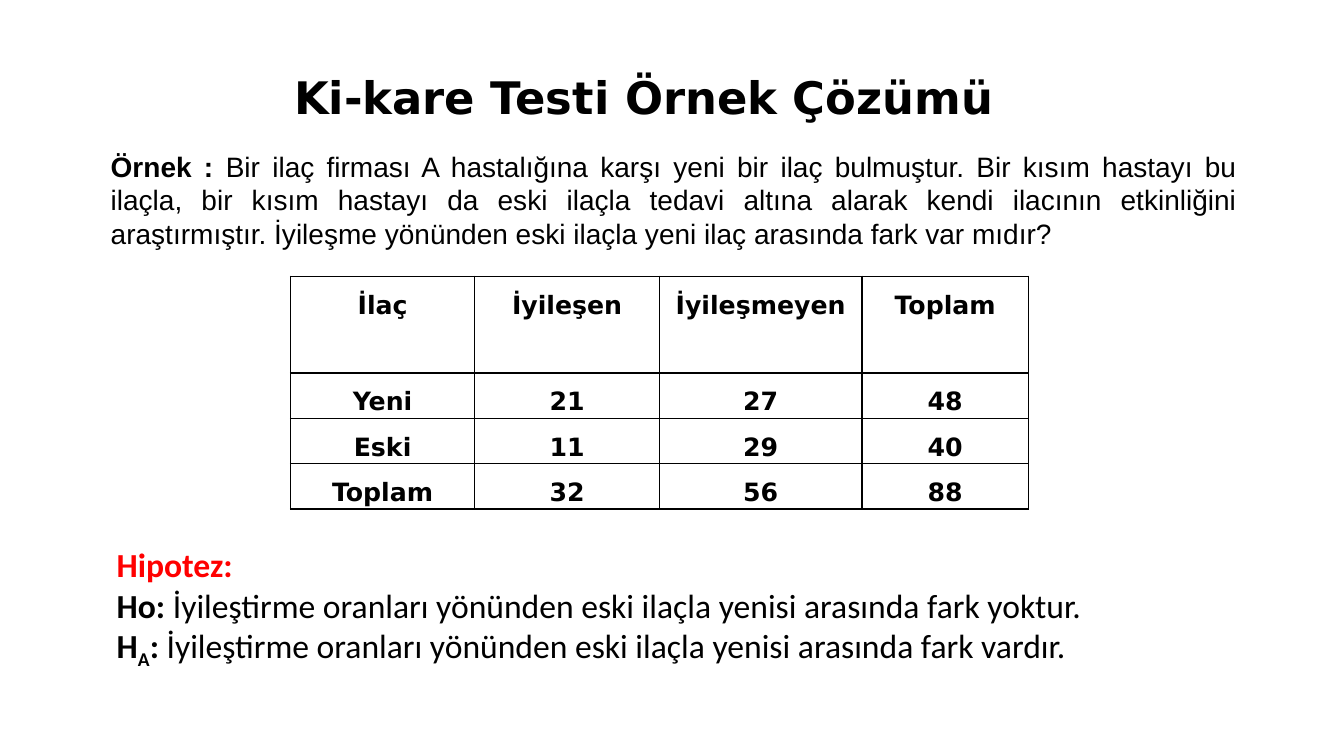
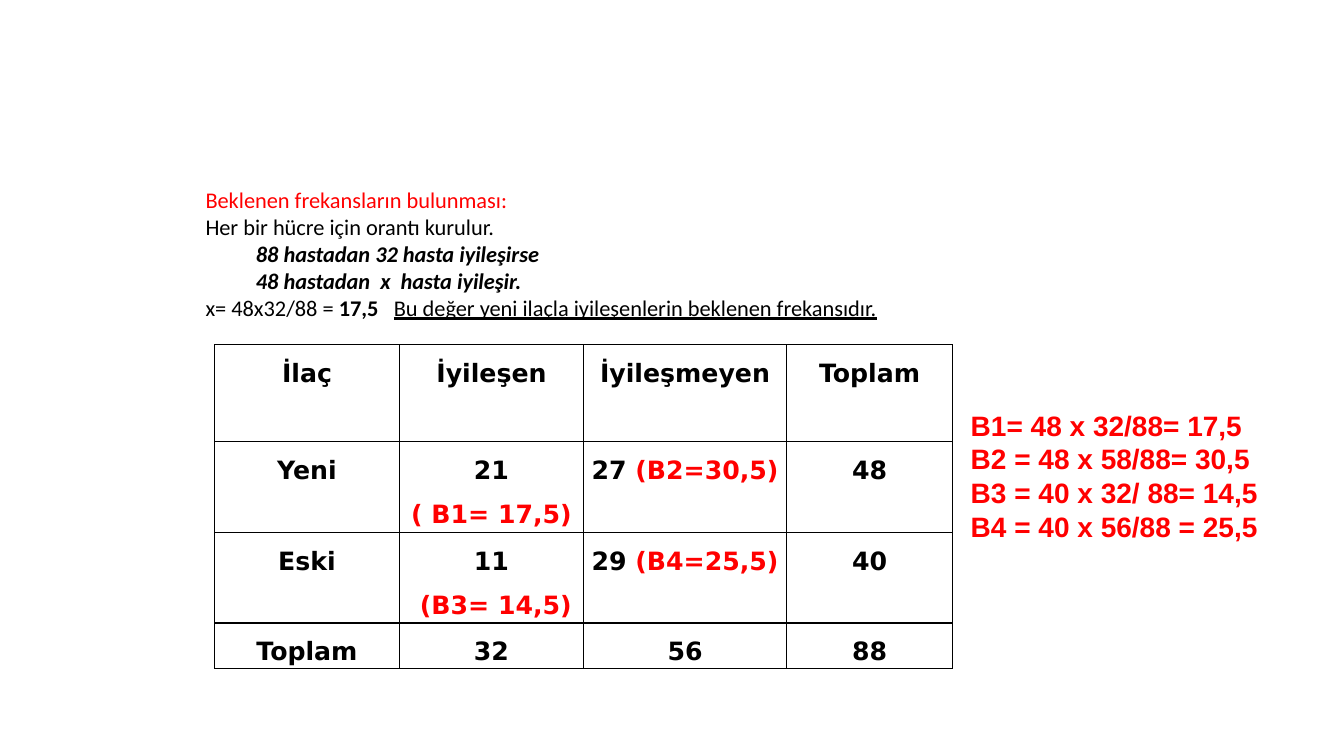
from lxml import etree
from pptx import Presentation
from pptx import util as u
from pptx.dml.color import RGBColor
from pptx.enum import text
from pptx.oxml.ns import qn

BLACK, RED = "000000", "FF0000"
HEADING_FONT, PROSE_FONT, BODY_FONT = "DejaVu Sans", "Arial", "Calibri"
LEFT, CENTER, JUSTIFY = text.PP_ALIGN.LEFT, text.PP_ALIGN.CENTER, text.PP_ALIGN.JUSTIFY
COLUMNS = [1.83, 1.83, 2.01, 1.65]
HEADER_HEIGHT, LINE_HEIGHT = 0.96, 0.45

# A paragraph is a list of (text, marks) runs.
# Marks: b bold, i italic, u underline, r red, s subscript.
TITLE = [[("Ki-kare Testi Örnek Çözümü", "b")]]
EXAMPLE = [[
    ("Örnek : ", "b"),
    ("Bir ilaç firması A hastalığına karşı yeni bir ilaç bulmuştur. Bir kısım "
     "hastayı bu ilaçla, bir kısım hastayı da eski ilaçla tedavi altına alarak "
     "kendi ilacının etkinliğini araştırmıştır. İyileşme yönünden eski ilaçla "
     "yeni ilaç arasında fark var mıdır?", ""),
]]
HYPOTHESES = [
    [("Hipotez:", "br")],
    [("Ho: ", "b"),
     ("İyileştirme oranları yönünden eski ilaçla yenisi arasında fark yoktur.", "")],
    [("H", "b"), ("A", "bs"), (": ", "b"),
     ("İyileştirme oranları yönünden eski ilaçla yenisi arasında fark vardır.", "")],
]
PROPORTION = [
    [("Beklenen frekansların bulunması:", "r")],
    [("Her bir hücre için orantı kurulur.", "")],
    [("88 hastadan 32 hasta iyileşirse", "bi")],
    [("48 hastadan  x  hasta iyileşir.", "bi")],
    [("x= 48x32/88 = ", ""), ("17,5   ", "b"),
     ("Bu değer yeni ilaçla iyileşenlerin beklenen frekansıdır.", "u")],
]
EXPECTED = [[(line, "br")] for line in (
    "B1= 48 x 32/88= 17,5",
    "B2 = 48 x 58/88= 30,5",
    "B3 = 40 x 32/ 88= 14,5",
    "B4 = 40 x 56/88 = 25,5",
)]
OBSERVED = [
    ["İlaç", "İyileşen", "İyileşmeyen", "Toplam"],
    ["Yeni", "21", "27", "48"],
    ["Eski", "11", "29", "40"],
    ["Toplam", "32", "56", "88"],
]
# Expected frequency by (row, column): text and whether it takes its own line
EXPECTED_NOTES = {
    (1, 1): ("( B1= 17,5)", True),
    (1, 2): (" (B2=30,5)", False),
    (2, 1): (" (B3= 14,5)", True),
    (2, 2): (" (B4=25,5)", False),
}


def color(value):
    return RGBColor.from_string(value)


def write(frame, paragraphs, font, size, align, spacing=None):
    """Fill a text frame with paragraphs of marked runs."""
    for number, runs in enumerate(paragraphs):
        paragraph = frame.paragraphs[0] if number == 0 else frame.add_paragraph()
        paragraph.alignment = align
        paragraph.line_spacing = spacing
        for words, marks in runs:
            run = paragraph.add_run()
            run.text = words
            run.font.name, run.font.size = font, u.Pt(size)
            run.font.bold, run.font.italic = "b" in marks, "i" in marks
            run.font.underline = "u" in marks
            run.font.color.rgb = color(RED if "r" in marks else BLACK)
            if "s" in marks:
                run.font._element.set("baseline", "-25000")


def add_text(slide, place, paragraphs, font, size, align=LEFT, wrap=True):
    frame = slide.shapes.add_textbox(*map(u.Inches, place)).text_frame
    frame.word_wrap = wrap
    write(frame, paragraphs, font, size, align)
    return frame


def add_borders(cell):
    properties = cell._tc.get_or_add_tcPr()
    for position, side in enumerate(("lnL", "lnR", "lnT", "lnB")):
        line = etree.Element(qn(f"a:{side}"), w=str(u.Pt(1)))
        fill = etree.SubElement(line, qn("a:solidFill"))
        etree.SubElement(fill, qn("a:srgbClr"), val=BLACK)
        properties.insert(position, line)


def cell_paragraphs(words, note):
    value = [(words, "b")]
    if not note:
        return [value]
    remark, own_line = note
    return [value, [(remark, "br")]] if own_line else [value + [(remark, "br")]]


def add_frequency_table(slide, left, top, row_heights, notes):
    table = slide.shapes.add_table(
        len(OBSERVED), len(COLUMNS), u.Inches(left), u.Inches(top),
        u.Inches(sum(COLUMNS)), u.Inches(sum(row_heights))).table
    for column, width in zip(table.columns, COLUMNS):
        column.width = u.Inches(width)
    for row, height in zip(table.rows, row_heights):
        row.height = u.Inches(height)
    for r, values in enumerate(OBSERVED):
        for c, words in enumerate(values):
            cell = table.cell(r, c)
            cell.margin_left = cell.margin_right = u.Inches(0.07)
            cell.margin_top = cell.margin_bottom = 0
            cell.fill.background()
            add_borders(cell)
            write(cell.text_frame, cell_paragraphs(words, notes.get((r, c))),
                  HEADING_FONT, 18, CENTER, 1.5)


def build_example(slide):
    add_frequency_table(slide, 2.88, 2.74, [HEADER_HEIGHT] + [LINE_HEIGHT] * 3, {})
    title = add_text(slide, (2.82, 0.64, 7.27, 0.64), TITLE, HEADING_FONT, 32, wrap=False)
    title.vertical_anchor = text.MSO_ANCHOR.MIDDLE
    add_text(slide, (1, 1.43, 11.37, 1.1), EXAMPLE, PROSE_FONT, 20, JUSTIFY)
    add_text(slide, (1.06, 5.35, 10.4, 1.31), HYPOTHESES, BODY_FONT, 24, JUSTIFY)


def build_expected_frequencies(slide):
    heights = [HEADER_HEIGHT, 0.87, 0.87, LINE_HEIGHT]
    add_frequency_table(slide, 2.13, 3.42, heights, EXPECTED_NOTES)
    add_text(slide, (9.53, 4, 3.46, 1.45), EXPECTED, PROSE_FONT, 20)
    proportion = add_text(slide, (1.94, 1.8, 11, 1.5), PROPORTION, BODY_FONT, 16)
    for paragraph in proportion.paragraphs[2:4]:
        paragraph._p.get_or_add_pPr().set("marL", str(u.Inches(0.5)))


def main():
    deck = Presentation()
    deck.slide_width, deck.slide_height = u.Inches(13.33), u.Inches(7.5)
    for build in (build_example, build_expected_frequencies):
        build(deck.slides.add_slide(deck.slide_layouts[6]))
    deck.save("out.pptx")


if __name__ == "__main__":
    main()
